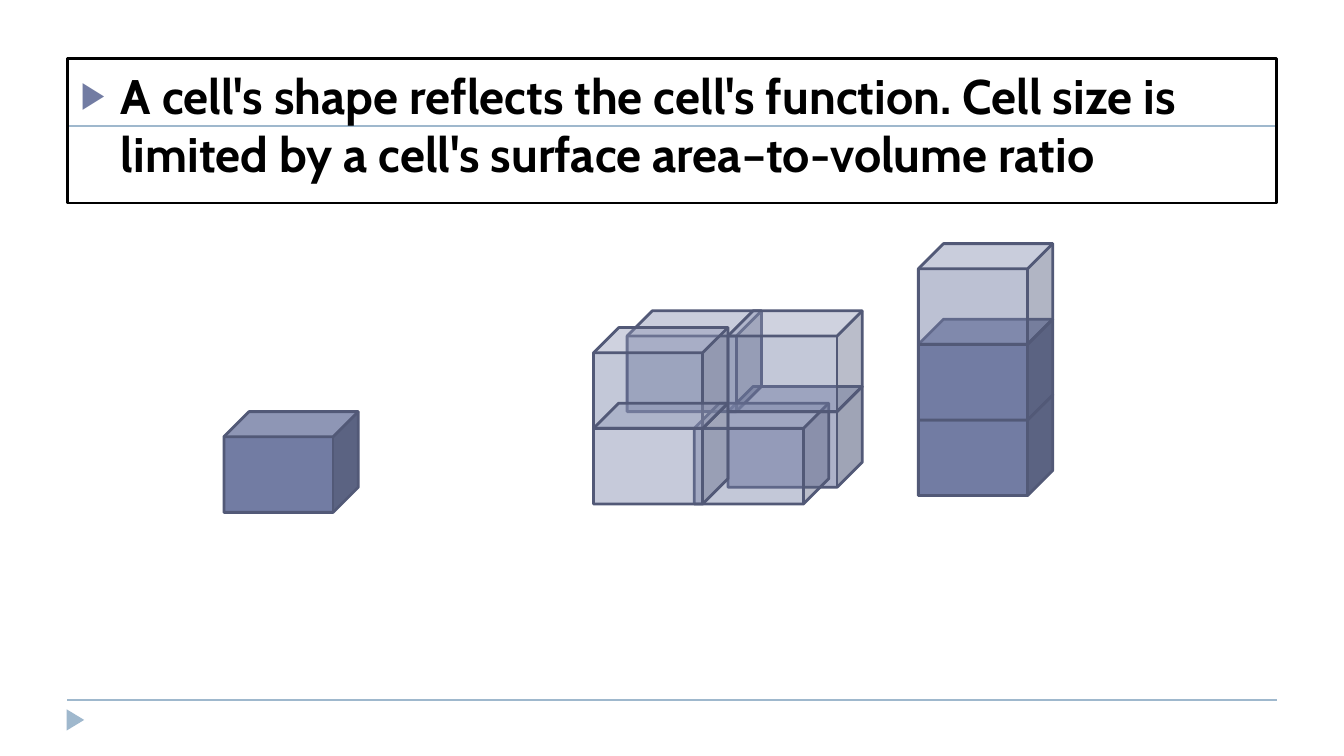
from lxml import etree
from pptx import Presentation
from pptx.dml.color import RGBColor
from pptx.enum.shapes import MSO_CONNECTOR, MSO_SHAPE
from pptx.enum.text import MSO_ANCHOR, MSO_AUTO_SIZE, PP_ALIGN
from pptx.oxml.ns import qn
from pptx.util import Pt

CUBE = MSO_SHAPE.CUBE
TRIANGLE = MSO_SHAPE.ISOSCELES_TRIANGLE
STRAIGHT = MSO_CONNECTOR.STRAIGHT

COLORS = {
    "rule": "9FB8CD",
    "cube": "727CA3",
    "cube_edge": "525977",
    "text": "000000",
}
FONT = "Cabin"
MARGIN, CONTENT_WIDTH = 36, 648
CUBE_WIDTH, CUBE_HEIGHT = 72, 54
LAYER = 40.5  # vertical step between stacked cubes

STACK_LEFT, STACK_TOP = 492, 130.5
FRONT_LEFT, FRONT_TOP = 318, 175.5
BACK_TOP = 166.5

# left, top, opacity in percent, from back to front
CUBES = [
    (390, BACK_TOP + LAYER, 58),
    (336, BACK_TOP, 47),
    (STACK_LEFT, STACK_TOP + 2 * LAYER, 100),
    (372, FRONT_TOP + LAYER, 42),
    (STACK_LEFT, STACK_TOP + LAYER, 100),
    (120, 220.5, 100),
    (FRONT_LEFT, FRONT_TOP, 42),
    (STACK_LEFT, STACK_TOP, 47),
    (FRONT_LEFT, FRONT_TOP + LAYER, 40),
    (390, BACK_TOP, 42),
]


def rgb(name):
    return RGBColor.from_string(COLORS[name])


def add_rule(slide, y):
    rule = slide.shapes.add_connector(
        STRAIGHT, Pt(MARGIN), Pt(y), Pt(MARGIN + CONTENT_WIDTH), Pt(y))
    rule.line.color.rgb = rgb("rule")
    rule.line.width = Pt(0.75)
    etree.SubElement(rule._element.spPr, qn("a:effectLst"))


def add_footer_marker(slide):
    marker = slide.shapes.add_shape(TRIANGLE, Pt(34.7), Pt(381), Pt(11.4), Pt(9.4))
    marker.rotation = 90
    marker.shadow.inherit = False
    marker.fill.solid()
    marker.fill.fore_color.rgb = rgb("rule")
    marker.line.fill.background()


def add_cube(slide, left, top, opacity):
    cube = slide.shapes.add_shape(
        CUBE, Pt(left), Pt(top), Pt(CUBE_WIDTH), Pt(CUBE_HEIGHT))
    cube.adjustments[0] = 0.25
    cube.shadow.inherit = False
    cube.fill.solid()
    cube.fill.fore_color.rgb = rgb("cube")
    if opacity < 100:
        color = cube._element.spPr.find(qn("a:solidFill"))[0]
        etree.SubElement(color, qn("a:alpha"), val=str(opacity * 1000))
    cube.line.color.rgb = rgb("cube_edge")
    cube.line.width = Pt(1.5)


def set_bullet(paragraph, indent):
    properties = paragraph._p.get_or_add_pPr()
    properties.set("marL", str(Pt(indent)))
    properties.set("indent", str(-Pt(indent)))
    color = etree.SubElement(properties, qn("a:buClr"))
    etree.SubElement(color, qn("a:srgbClr"), val=COLORS["cube"])
    etree.SubElement(properties, qn("a:buSzPct"), val="76000")
    etree.SubElement(properties, qn("a:buChar"), char="▶")


def fill_statement(slide, text):
    """Frame the body placeholder and bring it in front of the rules."""
    box = slide.placeholders[1]
    box.left, box.top = Pt(MARGIN), Pt(31.5)
    box.width, box.height = Pt(CONTENT_WIDTH), Pt(77.25)
    box.line.color.rgb = rgb("text")
    box.line.width = Pt(1.5)
    frame = box.text_frame
    frame.word_wrap = True
    frame.auto_size = MSO_AUTO_SIZE.NONE
    frame.vertical_anchor = MSO_ANCHOR.TOP
    frame.text = text
    paragraph = frame.paragraphs[0]
    paragraph.alignment = PP_ALIGN.LEFT
    paragraph.space_before = Pt(0)
    set_bullet(paragraph, 21.6)
    paragraph.font.name = FONT
    paragraph.font.size = Pt(26)
    paragraph.font.bold = True
    paragraph.font.color.rgb = rgb("text")
    slide.shapes._spTree.append(box._element)


def main():
    deck = Presentation()
    deck.slide_width, deck.slide_height = Pt(720), Pt(405)
    slide = deck.slides.add_slide(deck.slide_layouts[1])
    title = slide.shapes.title._element
    title.getparent().remove(title)

    for y in (375, 67.5):
        add_rule(slide, y)
    add_footer_marker(slide)
    fill_statement(slide, "A cell's shape reflects the cell's function. "
                          "Cell size is limited by a cell's surface "
                          "area–to-volume ratio")
    for left, top, opacity in CUBES:
        add_cube(slide, left, top, opacity)
    deck.save("out.pptx")


if __name__ == "__main__":
    main()
